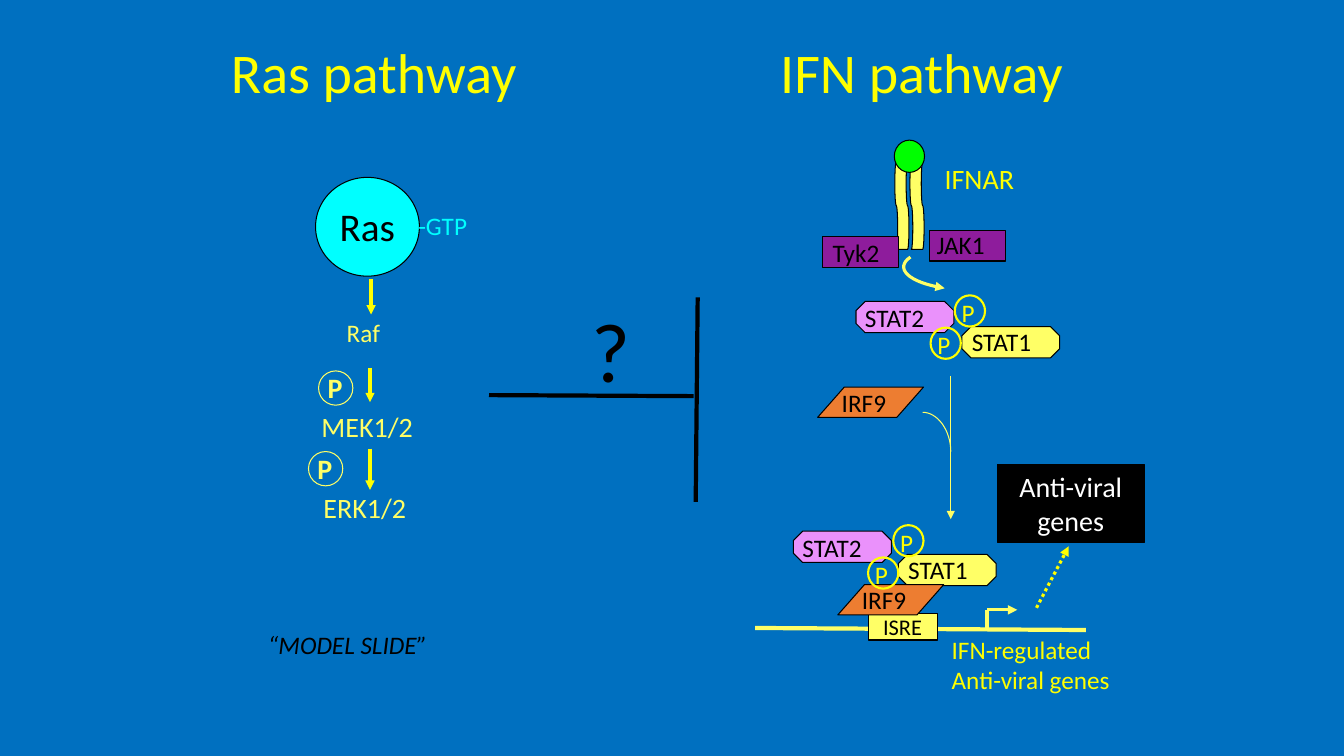
from dataclasses import dataclass

import pptx
import pptx.dml.color
import pptx.enum.dml
import pptx.enum.shapes
import pptx.enum.text
import pptx.oxml
import pptx.oxml.ns
import pptx.slide
import pptx.util
from pptx.util import Inches

RGBColor = pptx.dml.color.RGBColor
Shape = pptx.enum.shapes.MSO_SHAPE
Align = pptx.enum.text.PP_ALIGN
Dash = pptx.enum.dml.MSO_LINE

BLUE = RGBColor(0x00, 0x70, 0xC0)
BLACK = RGBColor(0x00, 0x00, 0x00)
WHITE = RGBColor(0xFF, 0xFF, 0xFF)
YELLOW = RGBColor(0xFF, 0xFF, 0x00)
PALE_YELLOW = RGBColor(0xFF, 0xFF, 0x66)
CYAN = RGBColor(0x00, 0xFF, 0xFF)
GREEN = RGBColor(0x00, 0xFF, 0x00)
PURPLE = RGBColor(0x8E, 0x1C, 0x9C)
PINK = RGBColor(0xEA, 0x91, 0xFB)
ORANGE = RGBColor(0xED, 0x7D, 0x31)

Point = tuple[float, float]


@dataclass
class Label:
    text: str
    left: float
    top: float
    width: float
    size: int = 18
    color: RGBColor = BLACK
    bold: bool = False
    italic: bool = False
    align: Align = Align.LEFT


@dataclass
class Outline:
    kind: Shape
    width: float
    height: float
    fill: RGBColor | None = None
    line: RGBColor = BLACK
    weight: float = 0.75
    adjustment: float | None = None
    rotation: int = 0


@dataclass
class Protein:
    """An outline whose label is shifted from its top left corner."""
    name: str
    outline: Outline
    shift: Point
    label_width: float
    color: RGBColor = BLACK
    size: int = 18
    bold: bool = False


@dataclass
class Stroke:
    start: Point
    end: Point
    color: RGBColor = YELLOW
    weight: float = 2.25
    arrow: bool = True
    dash: Dash | None = None


STAT1 = Protein("STAT1", Outline(Shape.OCTAGON, 0.97, 0.31, PALE_YELLOW, adjustment=0.293), (0, -0.05), 0.8)
STAT2 = Protein("STAT2", Outline(Shape.OCTAGON, 0.97, 0.31, PINK, adjustment=0.293), (-0.01, -0.04), 0.8)
IRF9 = Protein("IRF9", Outline(Shape.PARALLELOGRAM, 1.05, 0.3, ORANGE, adjustment=0.881), (0.14, -0.05), 0.65)
TYK2 = Protein("Tyk2", Outline(Shape.RECTANGLE, 0.75, 0.3, PURPLE), (0, -0.05), 0.67)
JAK1 = Protein("JAK1", Outline(Shape.RECTANGLE, 0.75, 0.3, PURPLE), (-0.03, -0.06), 0.68)
RAS = Protein("Ras", Outline(Shape.OVAL, 1.03, 0.98, CYAN), (0.14, 0.2), 0.75, size=28)
ISRE = Protein("ISRE", Outline(Shape.RECTANGLE, 0.69, 0.26, PALE_YELLOW), (0.05, -0.06), 0.59, size=16)
STAT_PHOSPHATE = Protein("P", Outline(Shape.OVAL, 0.3, 0.31, line=YELLOW, weight=1.5),
                         (-0.03, -0.03), 0.33, YELLOW)
KINASE_PHOSPHATE = Protein("P", Outline(Shape.OVAL, 0.34, 0.34, line=PALE_YELLOW),
                           (-0.01, -0.05), 0.35, PALE_YELLOW, 20, True)
RECEPTOR_CHAIN = Outline(Shape.FLOWCHART_PUNCHED_TAPE, 0.87, 0.14, PALE_YELLOW, rotation=90)
INTERFERON = Outline(Shape.OVAL, 0.3, 0.32, GREEN)
GENE_BOX = Outline(Shape.RECTANGLE, 1.46, 0.77, BLACK)

OUTLINES = [(RECEPTOR_CHAIN, 8.51, 1.97), (RECEPTOR_CHAIN, 8.66, 1.97),
            (INTERFERON, 8.87, 1.39), (GENE_BOX, 9.89, 4.61)]

PROTEINS = [
    (RAS, 3.13, 1.76), (KINASE_PHOSPHATE, 3.16, 3.68), (KINASE_PHOSPHATE, 3.06, 4.48),
    (JAK1, 9.22, 2.29), (TYK2, 8.16, 2.35),
    (STAT1, 9.54, 3.24), (STAT2, 8.49, 2.99),
    (STAT_PHOSPHATE, 9.47, 2.93), (STAT_PHOSPHATE, 9.23, 3.25),
    (IRF9, 8.11, 3.84), (ISRE, 8.61, 6.09),
    (STAT1, 8.91, 5.5), (IRF9, 8.31, 5.8), (STAT2, 7.87, 5.27),
    (STAT_PHOSPHATE, 8.61, 5.53), (STAT_PHOSPHATE, 8.86, 5.21),
]

TITLE = Label("Ras pathway", 2.19, 0.32, 3.06, 40, YELLOW)
LABELS = [
    Label("IFN pathway", 7.64, 0.32, 3.03, 40, YELLOW),
    Label("-GTP", 4.05, 2.04, 0.69, color=CYAN),
    Label("Raf", 3.34, 3.1, 0.53, color=PALE_YELLOW),
    Label("MEK1/2", 3.09, 4.01, 1.12, 20, PALE_YELLOW),
    Label("ERK1/2", 3.11, 4.82, 1.03, 20, PALE_YELLOW),
    Label("?", 5.77, 2.91, 0.59, 60),
    Label("IFNAR", 9.27, 1.55, 0.9, 20, YELLOW),
    Label("Anti-viral\ngenes", 9.98, 4.61, 1.28, 20, WHITE, align=Align.CENTER),
    Label("IFN-regulated\nAnti-viral genes", 9.34, 6.24, 1.79, color=YELLOW),
    Label("“MODEL SLIDE”", 2.56, 6.19, 1.8, italic=True),
]

STROKES = [
    Stroke((3.68, 2.77), (3.68, 3.12)),
    Stroke((3.67, 3.65), (3.67, 3.99)),
    Stroke((3.67, 4.45), (3.67, 4.86)),
    Stroke((6.88, 3.93), (4.85, 3.92), BLACK, 3, False),
    Stroke((6.9, 4.98), (6.92, 2.95), BLACK, 3, False),
    Stroke((9.43, 3.73), (9.43, 5.15), PALE_YELLOW, 0.75),
    Stroke((7.49, 6.23), (10.77, 6.25), PALE_YELLOW, 3, False),
    Stroke((9.79, 6.24), (9.79, 6.05), PALE_YELLOW, arrow=False),
    Stroke((9.79, 6.05), (10.09, 6.05), PALE_YELLOW),
    Stroke((10.28, 6.03), (10.6, 5.42), dash=Dash.ROUND_DOT),
]

KINASE_CURVE = [(9.03, 2.55), (8.87, 2.66), (9.0, 2.8), (9.37, 2.86)]
IRF9_CURVE = [(9.15, 4.09), (9.3, 4.09), (9.43, 4.27), (9.43, 4.48)]


def write_label(box, label: Label) -> None:
    box.left, box.top, box.width = Inches(label.left), Inches(label.top), Inches(label.width)
    lines = label.text.count("\n") + 1
    box.height = Inches(round(lines * label.size * 1.22 / 72 + 0.1, 2))
    frame = box.text_frame
    frame.text = label.text
    frame.word_wrap = False
    frame.auto_size = pptx.enum.text.MSO_AUTO_SIZE.SHAPE_TO_FIT_TEXT
    frame.vertical_anchor = pptx.enum.text.MSO_ANCHOR.TOP
    for para in frame.paragraphs:
        para.alignment = label.align
        for span in para.runs:
            span.font.name = "Calibri"
            span.font.size = pptx.util.Pt(label.size)
            span.font.bold = label.bold
            span.font.italic = label.italic
            span.font.color.rgb = label.color


def add_label(slide: pptx.slide.Slide, label: Label) -> None:
    write_label(slide.shapes.add_textbox(0, 0, 0, 0), label)


def add_outline(slide: pptx.slide.Slide, outline: Outline, left: float, top: float) -> None:
    shape = slide.shapes.add_shape(outline.kind, Inches(left), Inches(top),
                                   Inches(outline.width), Inches(outline.height))
    shape.shadow.inherit = False
    shape.rotation = outline.rotation
    if outline.adjustment is not None:
        shape.adjustments[0] = outline.adjustment
    if outline.fill is None:
        shape.fill.background()
    else:
        shape.fill.solid()
        shape.fill.fore_color.rgb = outline.fill
    shape.line.color.rgb = outline.line
    shape.line.width = pptx.util.Pt(outline.weight)


def add_protein(slide: pptx.slide.Slide, protein: Protein, left: float, top: float) -> None:
    add_outline(slide, protein.outline, left, top)
    add_label(slide, Label(protein.name, left + protein.shift[0], top + protein.shift[1],
                           protein.label_width, protein.size, protein.color, protein.bold))


def format_line(line, color: RGBColor, weight: float, arrow: bool) -> None:
    line.color.rgb = color
    line.width = pptx.util.Pt(weight)
    if arrow:
        tail = pptx.oxml.parse_xml(f'<a:tailEnd {pptx.oxml.ns.nsdecls("a")} type="triangle"/>')
        line._get_or_add_ln().append(tail)


def add_stroke(slide: pptx.slide.Slide, stroke: Stroke) -> None:
    connector = slide.shapes.add_connector(pptx.enum.shapes.MSO_CONNECTOR.STRAIGHT,
                                           *map(Inches, stroke.start + stroke.end))
    if stroke.dash is not None:
        connector.line.dash_style = stroke.dash
    format_line(connector.line, stroke.color, stroke.weight, stroke.arrow)
    no_effects = pptx.oxml.parse_xml(f'<a:effectLst {pptx.oxml.ns.nsdecls("a")}/>')
    connector._element.spPr.append(no_effects)


def add_curve(slide: pptx.slide.Slide, controls: list[Point], weight: float, arrow: bool) -> None:
    """Draw a cubic Bezier curve through short straight steps."""
    steps = 16
    points = []
    for step in range(steps + 1):
        t = step / steps
        weights = ((1 - t) ** 3, 3 * t * (1 - t) ** 2, 3 * t * t * (1 - t), t ** 3)
        points.append(tuple(Inches(sum(w * point[axis] for w, point in zip(weights, controls)))
                            for axis in (0, 1)))
    builder = slide.shapes.build_freeform(*points[0])
    builder.add_line_segments(points[1:], close=False)
    curve = builder.convert_to_shape()
    curve.shadow.inherit = False
    curve.fill.background()
    format_line(curve.line, PALE_YELLOW, weight, arrow)


def main() -> None:
    deck = pptx.Presentation()
    deck.slide_width, deck.slide_height = Inches(13.33), Inches(7.5)
    slide = deck.slides.add_slide(deck.slide_layouts.get_by_name("Title Only"))
    slide.background.fill.solid()
    slide.background.fill.fore_color.rgb = BLUE
    write_label(slide.shapes.title, TITLE)
    for stroke in STROKES:
        add_stroke(slide, stroke)
    for outline, left, top in OUTLINES:
        add_outline(slide, outline, left, top)
    for protein, left, top in PROTEINS:
        add_protein(slide, protein, left, top)
    add_curve(slide, KINASE_CURVE, 2.25, True)
    add_curve(slide, IRF9_CURVE, 0.75, False)
    for label in LABELS:
        add_label(slide, label)
    deck.save("out.pptx")


if __name__ == "__main__":
    main()
